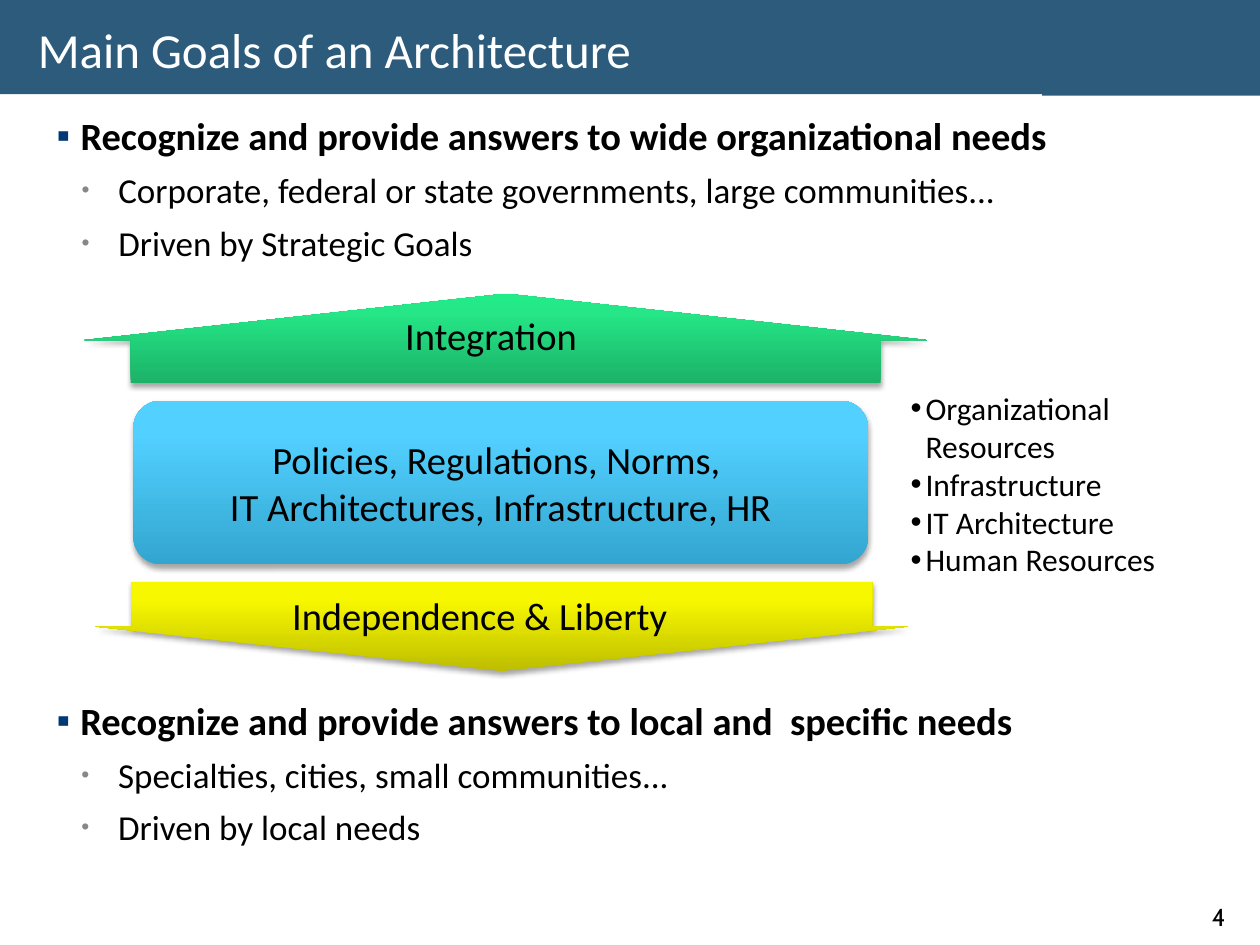
from lxml import etree
from pptx import Presentation, util as u
from pptx.dml.color import RGBColor
from pptx.enum import shapes, text
from pptx.oxml import parse_xml
from pptx.oxml.ns import nsdecls, qn


def rgb(value):
    return RGBColor.from_string(value)


def write(sp, lines, size, anchor=text.MSO_ANCHOR.TOP, wrap=True):
    tf = sp.text_frame
    for name, value in {"word_wrap": wrap, "vertical_anchor": anchor,
                        "auto_size": text.MSO_AUTO_SIZE.NONE}.items():
        setattr(tf, name, value)
    for i, line in enumerate(lines):
        p = tf.paragraphs[0] if i == 0 else tf.add_paragraph()
        p.text = line
        for r in p.runs:
            for name, value in {"name": "Calibri", "size": u.Pt(size), "bold": False}.items():
                setattr(r.font, name, value)
            r.font.color.rgb = rgb("000000")
    return tf


prs = Presentation()
prs.slide_width, prs.slide_height = u.Cm(25.4), u.Cm(19.05)
s = prs.slides.add_slide(prs.slide_layouts[1])
RECT = shapes.MSO_SHAPE.RECTANGLE

bands = []
for box in [(-0.1, -0.03, 25.65, 1.93), (21.01, 0, 4.47, 1.93)]:
    sp = s.shapes.add_shape(RECT, *map(u.Cm, box))
    sp.shadow.inherit = False
    sp.fill.solid()
    sp.fill.fore_color.rgb = rgb("2D5B7C")
    sp.line.fill.background()
    bands.append(sp)
s.shapes._spTree.insert(2, bands[0]._element)

title = s.shapes.title
title.left, title.top, title.width, title.height = map(u.Cm, (0.51, 0.13, 22.2, 1.7))
tf = write(title, ["Main Goals of an Architecture"], 28, text.MSO_ANCHOR.MIDDLE)
tf.paragraphs[0].alignment = text.PP_ALIGN.LEFT
tf.paragraphs[0].runs[0].font.color.rgb = rgb("FFFFFF")

body = s.placeholders[1]
body.left, body.top, body.width, body.height = map(u.Cm, (0.89, 2.13, 23.7, 3.61))
local = s.shapes.add_textbox(*map(u.Cm, (0.89, 13.92, 23.7, 3.61)))
resources = s.shapes.add_textbox(*map(u.Cm, (18.11, 7.72, 5.51, 4.11)))

HEAD = (0.48, 0.48, "▪", "003876", 100)
SUB = (1.24, 0.74, "•", "878787", 65)
ITEM = (0.3, 0.3, "•", "000000", 100)
lists = [
    (body, ["Recognize and provide answers to wide organizational needs",
            "Corporate, federal or state governments, large communities...",
            "Driven by Strategic Goals"], 20, [HEAD, SUB, SUB], True),
    (local, ["Recognize and provide answers to local and  specific needs",
             "Specialties, cities, small communities...",
             "Driven by local needs"], 20, [HEAD, SUB, SUB], True),
    (resources, ["Organizational \vResources", "Infrastructure", "IT Architecture",
                 "Human Resources"], 18, [ITEM] * 4, False),
]
for sp, lines, size, styles, wrap in lists:
    tf = write(sp, lines, size, wrap=wrap)
    for p, style in zip(tf.paragraphs, styles):
        left, hang, char, color, scale = style
        p.level = 1 if style is SUB else 0
        p.space_before = u.Pt(6 if style is SUB else 0)
        pPr = p._p.get_or_add_pPr()
        pPr.set("marL", str(u.Cm(left)))
        pPr.set("indent", str(-u.Cm(hang)))
        clr = etree.SubElement(pPr, qn("a:buClr"))
        etree.SubElement(clr, qn("a:srgbClr"), val=color)
        etree.SubElement(pPr, qn("a:buSzPct"), val=str(scale * 1000))
        etree.SubElement(pPr, qn("a:buFont"), typeface="Arial")
        etree.SubElement(pPr, qn("a:buChar"), char=char)
        if style is HEAD:
            p.runs[0].font.size = u.Pt(22)
            p.runs[0].font.bold = True

MSO = shapes.MSO_SHAPE
blocks = [
    (MSO.ROUNDED_RECTANGLE, (2.69, 8.08, 14.81, 3.3), [], ("33A6D0", "52D0FF", "54D0FF"),
     "Policies, Regulations, Norms, \vIT Architectures, Infrastructure, HR", None),
    (MSO.UP_ARROW, (1.7, 5.92, 16.99, 1.8), [0.89, 0.52], ("1CB268", "25E787", "21EC88"),
     "Integration", (7.92, 6.17, 4.01, 1.19)),
    (MSO.DOWN_ARROW, (1.91, 11.73, 16.41, 1.8), [0.91, 0.5], ("BEBE00", "F7F700", "F8F800"),
     "Independence & Liberty", (5.64, 11.81, 8.15, 1.19)),
]
for kind, box, adjust, colors, label, label_box in blocks:
    sp = s.shapes.add_shape(kind, *map(u.Cm, box))
    for i, value in enumerate(adjust):
        sp.adjustments[i] = value
    sp.line.fill.background()
    sp.shadow.inherit = False
    stops = "".join(f'<a:gs pos="{pos}"><a:srgbClr val="{c}"/></a:gs>'
                    for pos, c in zip((0, 80000, 100000), colors))
    spPr = sp._element.spPr
    spPr.find(qn("a:ln")).addprevious(parse_xml(
        f'<a:gradFill {nsdecls("a")} rotWithShape="1"><a:gsLst>{stops}</a:gsLst>'
        '<a:lin ang="16200000" scaled="0"/></a:gradFill>'))
    spPr.find(qn("a:effectLst")).append(parse_xml(
        f'<a:outerShdw {nsdecls("a")} blurRad="{u.Pt(3.1)}" dist="{u.Pt(1.8)}" '
        'dir="5400000" rotWithShape="0"><a:srgbClr val="000000">'
        '<a:alpha val="35000"/></a:srgbClr></a:outerShdw>'))
    if label_box:
        tx = s.shapes.add_textbox(*map(u.Cm, label_box))
        write(tx, [label], 22, wrap=False)
        s.shapes.add_group_shape([sp, tx])
    else:
        tf = write(sp, [label], 22, text.MSO_ANCHOR.MIDDLE)
        tf.paragraphs[0].alignment = text.PP_ALIGN.CENTER

number = s.shapes.add_textbox(*map(u.Cm, (24.18, 18.06, 1.12, 0.86)))
tf = write(number, ["4"], 14, wrap=False)
tf.paragraphs[0].runs[0].font.name = "Cabin"

prs.save("out.pptx")
